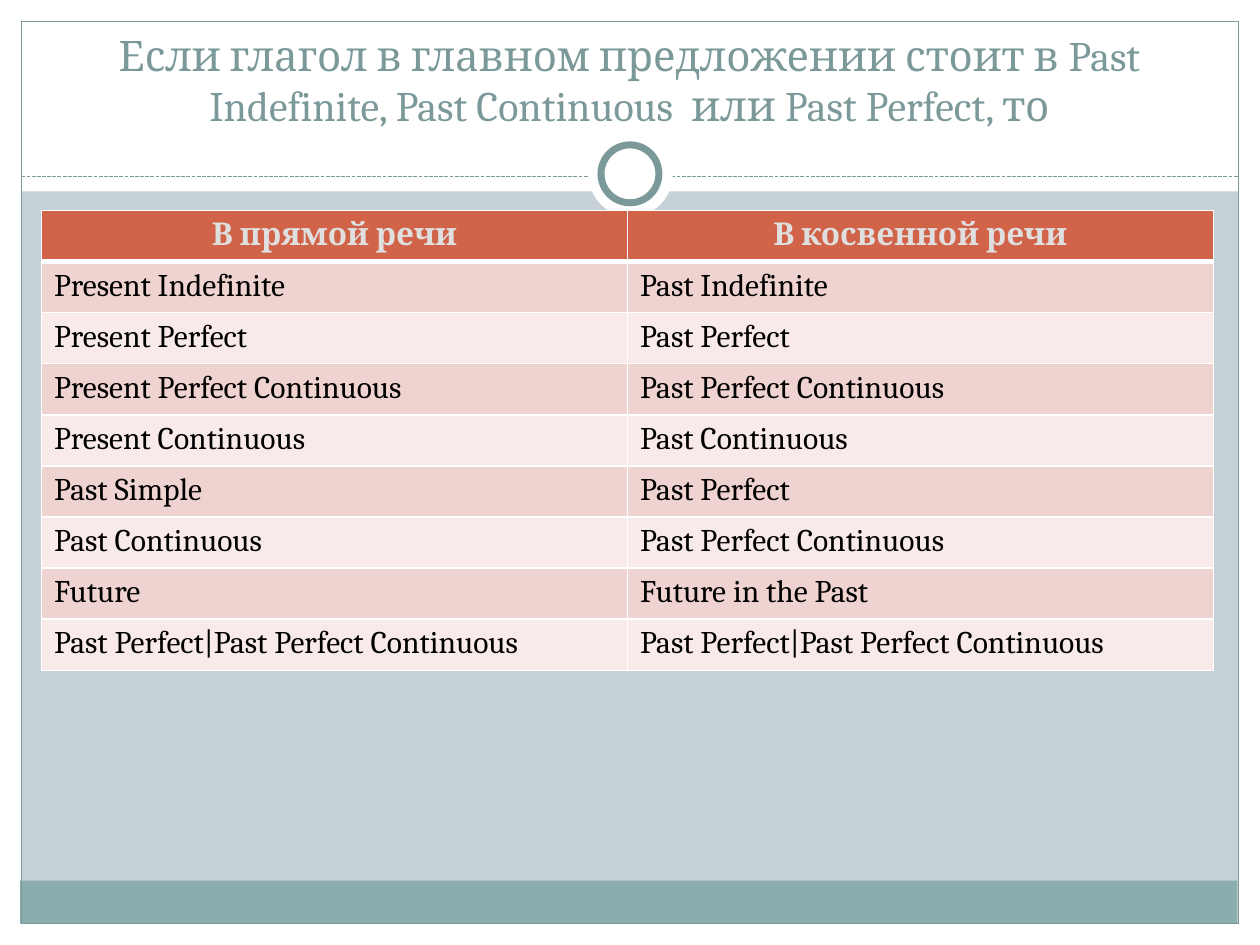
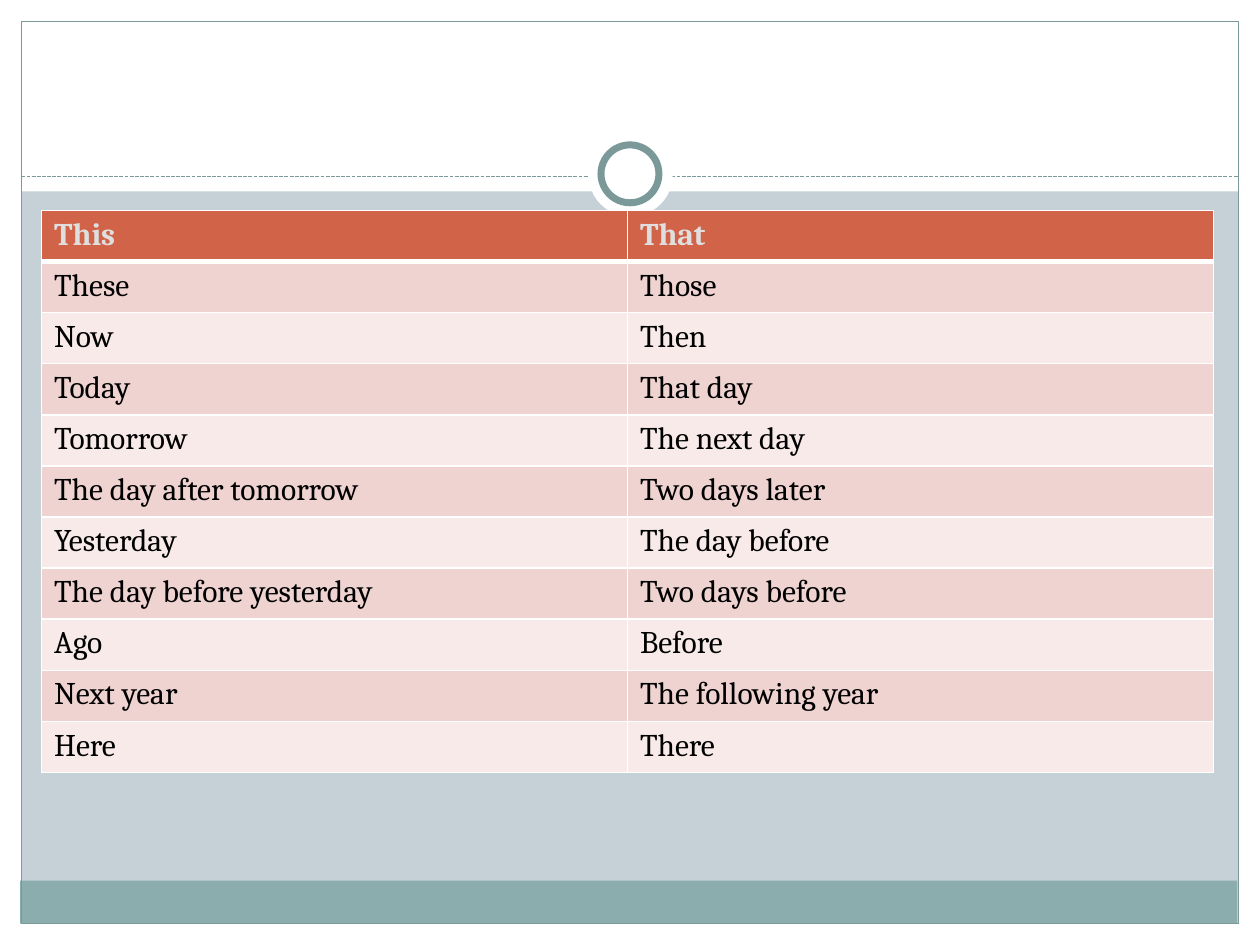
import pptx
import pptx.dml.color
import pptx.enum.dml
import pptx.enum.shapes
import pptx.enum.text
import pptx.oxml
import pptx.oxml.ns
import pptx.util
from pptx.util import Inches

FONT = "Cambria"
TEAL = "7C999A"
WHITE = "FFFFFF"
HEADER_FILL = "D16349"
HEADER_TEXT = "DFDFDF"
ROW_FILLS = ["F7EAE9", "EED3D0"]
ROW_HEIGHT = pptx.util.Pt(29.2)
RECTANGLE = pptx.enum.shapes.MSO_SHAPE.RECTANGLE
OVAL = pptx.enum.shapes.MSO_SHAPE.OVAL
CENTER = pptx.enum.text.PP_ALIGN.CENTER

# Frame parts on every slide: shape, left, top, width, height, fill
margins_and_band = [
    (RECTANGLE, 0, 7.33, 10, 0.17, WHITE),
    (RECTANGLE, 0, 0, 10, 1.52, WHITE),
    (RECTANGLE, 0, 0, 0.17, 7.5, WHITE),
    (RECTANGLE, 9.83, 0, 0.17, 7.5, WHITE),
    (RECTANGLE, 0.16, 6.99, 9.66, 0.34, "8CADAE"),
    (RECTANGLE, 0.17, 0.17, 9.66, 7.16, None),
]
ring = [
    (OVAL, 4.67, 1.05, 0.67, 0.67, WHITE),
    (OVAL, 4.77, 1.15, 0.46, 0.46, WHITE),
]

# Content: title, header alignment, table rows
slides = [
    ("Если глагол в главном предложении стоит в Past Indefinite, "
     "Past Continuous  или Past Perfect, то", CENTER, [
         ("В прямой речи", "В косвенной речи"),
         ("Present Indefinite", "Past Indefinite"),
         ("Present Perfect", "Past Perfect"),
         ("Present Perfect Continuous", "Past Perfect Continuous"),
         ("Present Continuous", "Past Continuous"),
         ("Past Simple", "Past Perfect"),
         ("Past Continuous", "Past Perfect Continuous"),
         ("Future", "Future in the Past"),
         ("Past Perfect|Past Perfect Continuous",
          "Past Perfect|Past Perfect Continuous"),
     ]),
    (None, pptx.enum.text.PP_ALIGN.LEFT, [
        ("This", "That"),
        ("These", "Those"),
        ("Now", "Then"),
        ("Today", "That day"),
        ("Tomorrow", "The next day"),
        ("The day after tomorrow", "Two days later"),
        ("Yesterday", "The day before"),
        ("The day before yesterday", "Two days before"),
        ("Ago", "Before"),
        ("Next year", "The following year"),
        ("Here", "There"),
    ]),
]


def color(value):
    return pptx.dml.color.RGBColor.from_string(value)


def format_text(paragraph, size, text_color, alignment, bold=False):
    paragraph.alignment = alignment
    for span in paragraph.runs:
        span.font.name = FONT
        span.font.size = pptx.util.Pt(size)
        span.font.bold = bold
        span.font.color.rgb = color(text_color)


deck = pptx.Presentation()
deck.slide_width = Inches(10)
deck.slide_height = Inches(7.5)

for title, header_alignment, rows in slides:
    page = deck.slides.add_slide(deck.slide_layouts[6])
    page.background.fill.solid()
    page.background.fill.fore_color.rgb = color("C5D1D7")

    # Margins, bottom band, outline and ring
    for kind, left, top, width, height, fill in margins_and_band + ring:
        if (kind, left) == (OVAL, 4.67):
            # The dashed divider lies beneath the ring
            divider = page.shapes.add_connector(
                pptx.enum.shapes.MSO_CONNECTOR.STRAIGHT,
                Inches(0.17), Inches(1.4), Inches(9.83), Inches(1.4))
            divider.line.color.rgb = color(TEAL)
            divider.line.width = pptx.util.Pt(0.75)
            divider.line.dash_style = pptx.enum.dml.MSO_LINE.SQUARE_DOT
            divider._element.spPr.append(
                pptx.oxml.parse_xml(f"<a:effectLst {pptx.oxml.ns.nsdecls('a')}/>"))
        part = page.shapes.add_shape(
            kind, Inches(left), Inches(top), Inches(width), Inches(height))
        part.shadow.inherit = False
        if fill:
            part.fill.solid()
            part.fill.fore_color.rgb = color(fill)
        else:
            part.fill.background()
        part.line.fill.background()
    outline = page.shapes[len(margins_and_band) - 1]
    inner_circle = page.shapes[-1]
    for part, line_width in [(outline, 0.75), (inner_circle, 4)]:
        part.line.color.rgb = color(TEAL)
        part.line.width = pptx.util.Pt(line_width)

    # Title
    if title:
        box = page.shapes.add_textbox(
            Inches(0.33), Inches(0.25), Inches(9.33), Inches(0.83))
        box.text_frame.word_wrap = True
        box.text_frame.vertical_anchor = pptx.enum.text.MSO_ANCHOR.BOTTOM
        box.text_frame.text = title
        format_text(box.text_frame.paragraphs[0], 24, TEAL, CENTER)

    # Table with a header row and alternating bands
    table = page.shapes.add_table(
        len(rows), 2, Inches(0.33), Inches(1.67),
        Inches(9.3), ROW_HEIGHT * len(rows)).table
    for row_number, row in enumerate(rows):
        is_header = row_number == 0
        for column_number, text in enumerate(row):
            cell = table.cell(row_number, column_number)
            cell.fill.solid()
            cell.fill.fore_color.rgb = color(
                HEADER_FILL if is_header else ROW_FILLS[row_number % 2])
            cell.text_frame.text = text
            format_text(cell.text_frame.paragraphs[0], 18,
                        HEADER_TEXT if is_header else "000000",
                        header_alignment if is_header else None, is_header)
            # Cell borders, heavier between header and body
            heavy_side = {0: "B", 1: "T"}.get(row_number)
            for position, side in enumerate("LRTB"):
                border_width = pptx.util.Pt(3 if side == heavy_side else 1)
                border = pptx.oxml.parse_xml(
                    f'<a:ln{side} {pptx.oxml.ns.nsdecls("a")} w="{border_width}">'
                    f'<a:solidFill><a:srgbClr val="{WHITE}"/></a:solidFill>'
                    f'</a:ln{side}>')
                cell._tc.get_or_add_tcPr().insert(position, border)

deck.save("out.pptx")
